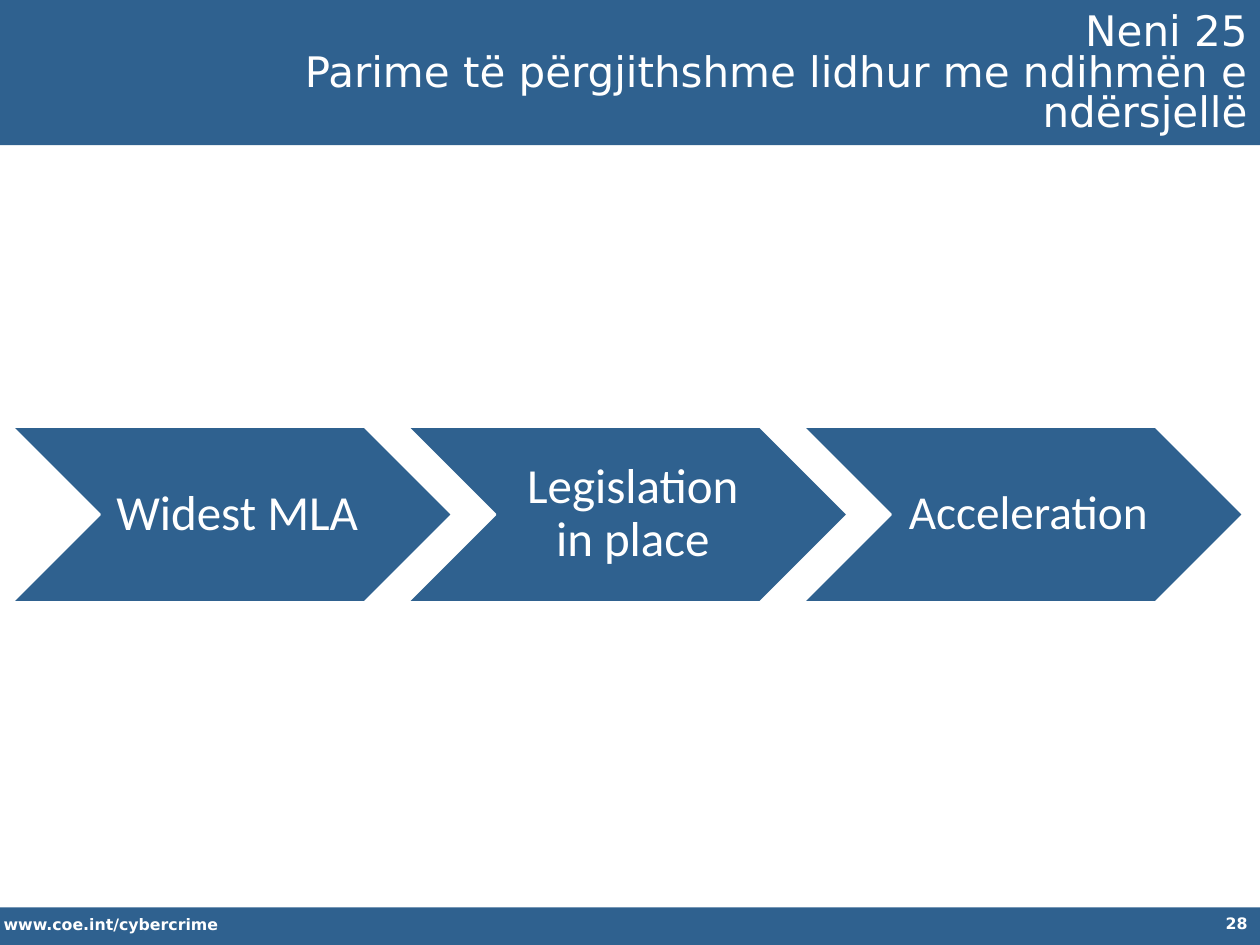
import pptx
import pptx.util
import pptx.dml.color
import pptx.enum.shapes
import pptx.enum.text
from dataclasses import dataclass

Pt = pptx.util.Pt
Shape = pptx.enum.shapes.MSO_SHAPE
Align = pptx.enum.text.PP_ALIGN
Anchor = pptx.enum.text.MSO_ANCHOR


@dataclass(frozen=True)
class Theme:
    blue: str = "2F618F"
    white: str = "FFFFFF"
    heading_font: str = "DejaVu Sans"
    step_font: str = "Calibri"
    title_size: int = 24
    step_size: int = 28
    tight_step_size: int = 27
    footer_size: int = 9


def rgb(value):
    return pptx.dml.color.RGBColor.from_string(value)


def write(frame, text, *, font, size, color, bold=False, align=Align.LEFT,
          anchor=Anchor.TOP, spacing=1.0, insets=(7.2, 3.6, 7.2, 3.6)):
    """Fill a text frame, one paragraph per line of text."""
    frame.word_wrap = True
    frame.vertical_anchor = anchor
    (frame.margin_left, frame.margin_top,
     frame.margin_right, frame.margin_bottom) = map(Pt, insets)
    frame.text = text
    for paragraph in frame.paragraphs:
        paragraph.alignment = align
        paragraph.line_spacing = spacing
        paragraph.font.name = font
        paragraph.font.size = Pt(size)
        paragraph.font.bold = bold
        paragraph.font.color.rgb = rgb(color)


class SlideBuilder:
    def __init__(self, slide, theme):
        self.slide = slide
        self.theme = theme

    def block(self, kind, left, top, width, height, outline=None):
        shape = self.slide.shapes.add_shape(
            kind, Pt(left), Pt(top), Pt(width), Pt(height))
        shape.shadow.inherit = False
        shape.fill.solid()
        shape.fill.fore_color.rgb = rgb(self.theme.blue)
        if outline:
            shape.line.color.rgb = rgb(outline)
            shape.line.width = Pt(1)
        else:
            shape.line.fill.background()
        return shape

    def band(self, top, height):
        self.block(Shape.RECTANGLE, 0, top, 720, height)

    def title(self, text, left, top, width, height):
        title = self.block(Shape.RECTANGLE, left, top, width, height)
        write(title.text_frame, text, font=self.theme.heading_font,
              size=self.theme.title_size, color=self.theme.white,
              align=Align.RIGHT, anchor=Anchor.MIDDLE, spacing=0.8)

    def step(self, text, size, left, top, width, height):
        step = self.block(Shape.CHEVRON, left, top, width, height,
                          outline=self.theme.white)
        write(step.text_frame, text, font=self.theme.step_font, size=size,
              color=self.theme.white, align=Align.CENTER,
              anchor=Anchor.MIDDLE, spacing=0.9, insets=(8.6, 2.9, 2.9, 2.9))

    def footer(self, text, left, top, width, height, align=Align.LEFT):
        footer = self.slide.shapes.add_textbox(
            Pt(left), Pt(top), Pt(width), Pt(height))
        write(footer.text_frame, text, font=self.theme.heading_font,
              size=self.theme.footer_size, color=self.theme.white,
              bold=True, align=align)


def main():
    deck = pptx.Presentation()
    deck.slide_width, deck.slide_height = Pt(720), Pt(540)
    theme = Theme()
    page = SlideBuilder(deck.slides.add_slide(deck.slide_layouts[6]), theme)

    # Header and footer bands
    page.band(-2, 85)
    page.band(518.5, 23)
    page.footer("www.coe.int/cybercrime", -5, 519, 253.5, 18)

    # Process steps, evenly spaced
    steps = [
        ("Widest MLA", theme.step_size),
        ("Legislation in place", theme.step_size),
        ("Acceleration", theme.tight_step_size),
    ]
    step_pitch = 226
    for index, (label, size) in enumerate(steps):
        page.step(label, size, 7.2 + index * step_pitch, 244, 251, 100)

    # Page number and title
    page.footer("28", 552, 518.4, 168, 21.6, align=Align.RIGHT)
    page.title("Neni 25\nParime të përgjithshme lidhur me ndihmën e ndërsjellë",
               121.7, 6.5, 598.3, 72.7)

    deck.save("out.pptx")


if __name__ == "__main__":
    main()
